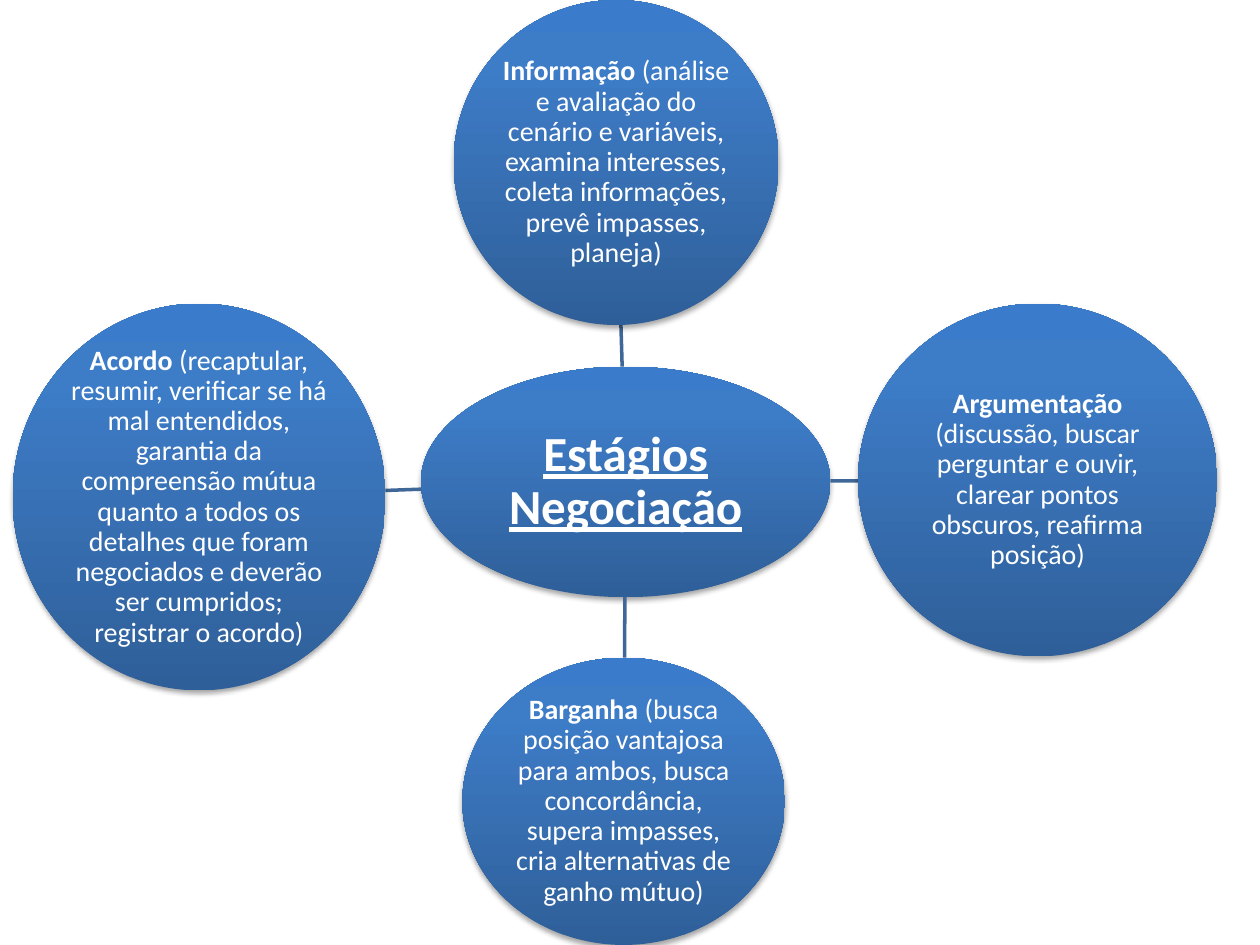
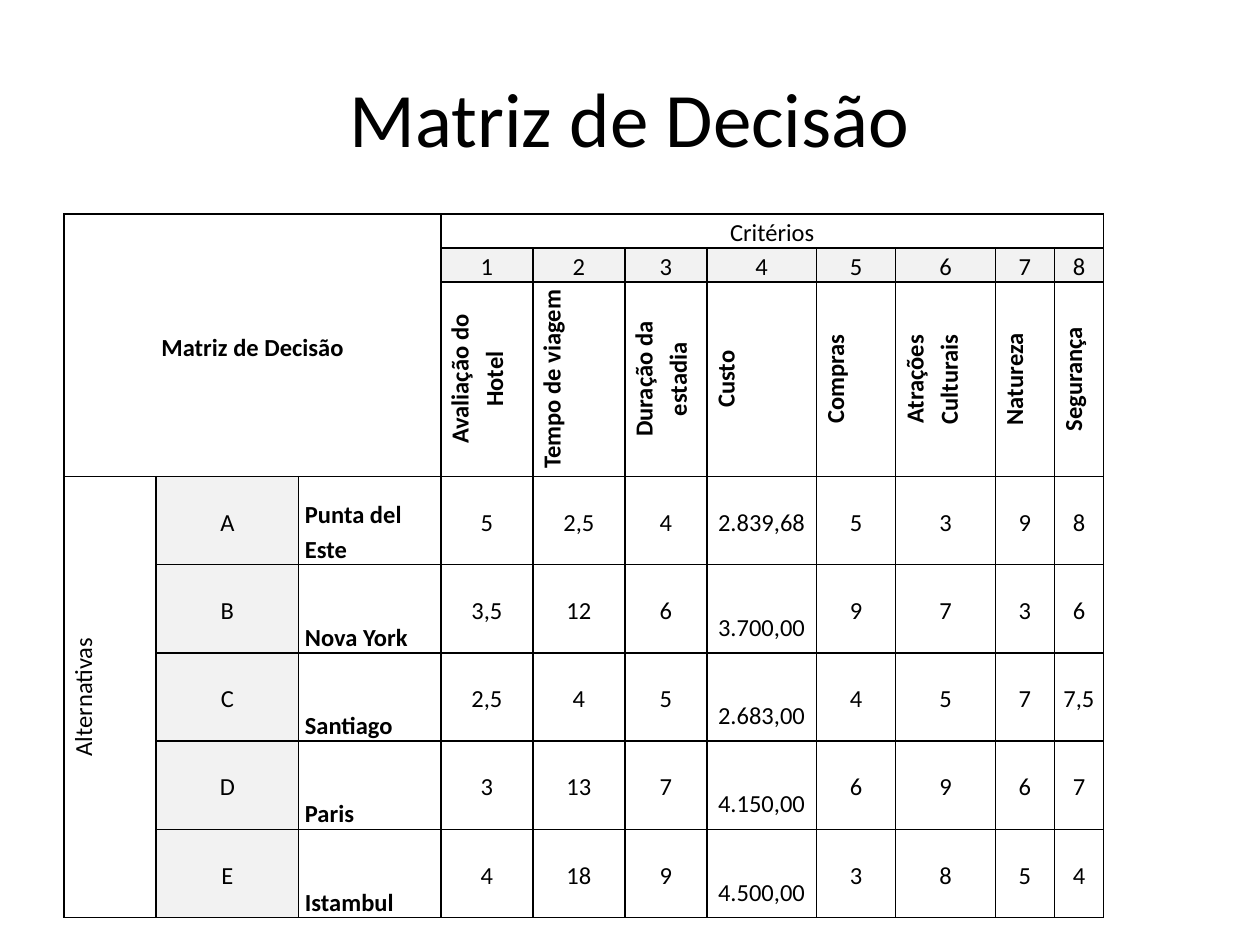
from copy import deepcopy
from dataclasses import dataclass
from itertools import product
from math import hypot

from pptx import Presentation
from pptx.dml.color import RGBColor
from pptx.enum.shapes import MSO_CONNECTOR, MSO_SHAPE
from pptx.enum.text import MSO_ANCHOR, PP_ALIGN
from pptx.oxml import parse_xml
from pptx.oxml.ns import nsdecls, qn
from pptx.util import Inches, Pt

UNIT = 0.1  # inches in one grid column or row
COLUMNS, ROWS = 100, 75


@dataclass(frozen=True)
class Theme:
    font: str = "Calibri"
    ink: str = "000000"
    light: str = "FFFFFF"
    spoke: str = "3F6797"
    header: str = "F2F2F2"
    gradient: tuple = ((0, "2F5F99"), (0.8, "3D7CC7"), (1, "3A7CCB"))
    title_size: int = 44
    hub_size: int = 28
    stage_size: int = 16
    table_size: int = 14


THEME = Theme()


@dataclass(frozen=True)
class Box:
    """A rectangle measured in grid columns and rows."""
    left: float
    top: float
    width: float
    height: float

    def inner(self, left, top, width, height):
        return Box(self.left + left, self.top + top, width, height)

    def inches(self):
        return [Inches(n * UNIT) for n in (self.left, self.top, self.width, self.height)]

    def centre(self):
        return self.left + self.width / 2, self.top + self.height / 2

    def rim_towards(self, other):
        """Point where the inscribed ellipse meets the line to the other centre."""
        (x, y), (far_x, far_y) = self.centre(), other.centre()
        dx, dy = far_x - x, far_y - y
        reach = hypot(2 * dx / self.width, 2 * dy / self.height)
        return x + dx / reach, y + dy / reach


PAGE = Box(0, 0, COLUMNS, ROWS)

HUB = (33.4, 29.1, 32.5, 18.3)
STAGES = [
    ("Informação", "(análise e avaliação do cenário e variáveis, examina interesses, "
     "coleta informações, prevê impasses, planeja)", (36, 0, 25.8, 25.8)),
    ("Argumentação", "(discussão, buscar perguntar e ouvir, clarear pontos obscuros, "
     "reafirma posição)", (68.1, 24.1, 28.5, 28)),
    ("Barganha", "(busca posição vantajosa para ambos, busca concordância, "
     "supera impasses, cria alternativas de ganho mútuo)", (36.7, 52.2, 25.6, 22.8)),
    ("Acordo", "(recaptular, resumir, verificar se há mal entendidos, garantia da "
     "compreensão mútua quanto a todos os detalhes que foram negociados e deverão "
     "ser cumpridos; registrar o acordo)", (1, 24.1, 29.6, 30.7)),
]

CRITERIA = ["Avaliação do Hotel", "Tempo de viagem", "Duração da estadia", "Custo",
            "Compras", "Atrações Culturais", "Natureza", "Segurança"]
ALTERNATIVES = {
    "Punta del Este": ["5", "2,5", "4", "2.839,68", "5", "3", "9", "8"],
    "Nova York": ["3,5", "12", "6", "3.700,00", "9", "7", "3", "6"],
    "Santiago": ["2,5", "4", "5", "2.683,00", "4", "5", "7", "7,5"],
    "Paris": ["3", "13", "7", "4.150,00", "6", "9", "6", "7"],
    "Istambul": ["4", "18", "9", "4.500,00", "3", "8", "5", "4"],
}
COLUMN_WIDTHS = [7.3, 11.3, 11.3, 7.3, 7.3, 6.5, 8.7, 6.3, 7.9, 4.7, 3.9]
ROW_HEIGHTS = [2.3, 2.3, 10.4] + [7] * len(ALTERNATIVES)
FIRST_COLUMN, FIRST_ROW = 3, 3
COST = CRITERIA.index("Custo")


def set_all(target, values):
    for name, value in values.items():
        setattr(target, name, value)


def write(frame, spans, size, color, align=PP_ALIGN.CENTER, spacing=1.0):
    """Fill the first paragraph with (text, font values) spans."""
    frame.word_wrap = True
    para = frame.paragraphs[0]
    set_all(para, {"alignment": align, "line_spacing": spacing})
    for text, values in spans:
        span = para.add_run()
        span.text = text
        set_all(span.font, {"name": THEME.font, "size": Pt(size), "bold": False, **values})
        span.font.color.rgb = RGBColor.from_string(color)


def set_margins(target, side, top=0.0, bottom=0.0):
    set_all(target, {"margin_left": Inches(side), "margin_right": Inches(side),
                     "margin_top": Inches(top), "margin_bottom": Inches(bottom)})


def add_bubble(page, box, spans, size, margin):
    bubble = page.shapes.add_shape(MSO_SHAPE.OVAL, *box.inches())
    bubble.line.fill.background()
    bubble.fill.gradient()
    bubble.fill.gradient_angle = 90
    properties = bubble._element.spPr
    stops = properties.find(".//" + qn("a:gsLst"))
    stops.append(deepcopy(stops[0]))
    for stop, (position, color) in zip(bubble.fill.gradient_stops, THEME.gradient):
        stop.position = position
        stop.color.rgb = RGBColor.from_string(color)
    bubble.shadow.inherit = False
    properties.find(qn("a:effectLst")).append(parse_xml(
        f'<a:outerShdw {nsdecls("a")} blurRad="{Pt(3.1)}" dist="{Pt(1.8)}" dir="5400000" '
        f'rotWithShape="0"><a:srgbClr val="{THEME.ink}"><a:alpha val="35000"/></a:srgbClr>'
        '</a:outerShdw>'))
    frame = bubble.text_frame
    frame.vertical_anchor = MSO_ANCHOR.MIDDLE
    set_margins(frame, margin, margin, margin)
    write(frame, spans, size, THEME.light, spacing=0.9)


def add_spoke(page, hub, stage):
    ends = (*hub.rim_towards(stage), *stage.rim_towards(hub))
    spoke = page.shapes.add_connector(MSO_CONNECTOR.STRAIGHT, *(Inches(n * UNIT) for n in ends))
    spoke.line.width = Pt(2)
    spoke.line.color.rgb = RGBColor.from_string(THEME.spoke)
    spoke._element.spPr.append(parse_xml(f'<a:effectLst {nsdecls("a")}/>'))


def build_stages(page, box):
    hub = box.inner(*HUB)
    add_bubble(page, hub, [("Estágios Negociação", {"bold": True, "underline": True})],
               THEME.hub_size, 0.02)
    for name, details, place in STAGES:
        stage = box.inner(*place)
        add_spoke(page, hub, stage)
        add_bubble(page, stage, [(name, {"bold": True}), (" " + details, {})],
                   THEME.stage_size, 0.01)


def add_title(page, box, text):
    frame = page.shapes.add_textbox(*box.inches()).text_frame
    frame.vertical_anchor = MSO_ANCHOR.MIDDLE
    write(frame, [(text, {})], THEME.title_size, THEME.ink)


def style_cell(cell):
    """Give the cell black borders, no fill and narrow margins."""
    properties = cell._tc.get_or_add_tcPr()
    for side in "LRTB":
        properties.append(parse_xml(
            f'<a:ln{side} {nsdecls("a")} w="{Pt(1)}"><a:solidFill>'
            f'<a:srgbClr val="{THEME.ink}"/></a:solidFill></a:ln{side}>'))
    cell.fill.background()
    set_margins(cell, 0.05)


def fill_cell(cell, text, bold=False, shaded=False, upright=False,
              anchor=MSO_ANCHOR.MIDDLE, align=PP_ALIGN.CENTER):
    cell.vertical_anchor = anchor
    if shaded:
        cell.fill.solid()
        cell.fill.fore_color.rgb = RGBColor.from_string(THEME.header)
    if upright:
        cell._tc.get_or_add_tcPr().set("vert", "vert270")
    write(cell.text_frame, [(text, {"bold": bold})], THEME.table_size, THEME.ink, align, 1.15)


def add_matrix(page, box):
    row_count, column_count = len(ROW_HEIGHTS), len(COLUMN_WIDTHS)
    table = page.shapes.add_table(row_count, column_count, *box.inches()).table
    set_all(table, {"first_row": False, "horz_banding": False})
    for column, width in zip(table.columns, COLUMN_WIDTHS):
        column.width = Inches(width * UNIT)
    for row, height in zip(table.rows, ROW_HEIGHTS):
        row.height = Inches(height * UNIT)
    for row, column in product(range(row_count), range(column_count)):
        style_cell(table.cell(row, column))

    for first, last in [((0, 0), (FIRST_ROW - 1, FIRST_COLUMN - 1)),
                        ((0, FIRST_COLUMN), (0, column_count - 1)),
                        ((FIRST_ROW, 0), (row_count - 1, 0))]:
        table.cell(*first).merge(table.cell(*last))
    fill_cell(table.cell(0, 0), "Matriz de Decisão", bold=True)
    fill_cell(table.cell(0, FIRST_COLUMN), "Critérios", anchor=MSO_ANCHOR.BOTTOM)
    fill_cell(table.cell(FIRST_ROW, 0), "Alternativas", upright=True)

    for number, criterion in enumerate(CRITERIA):
        column = FIRST_COLUMN + number
        fill_cell(table.cell(1, column), str(number + 1), shaded=True)
        fill_cell(table.cell(2, column), criterion, bold=True, upright=True)
    for number, (name, scores) in enumerate(ALTERNATIVES.items()):
        row = FIRST_ROW + number
        fill_cell(table.cell(row, 1), "ABCDE"[number], shaded=True)
        fill_cell(table.cell(row, 2), name, bold=True,
                  anchor=MSO_ANCHOR.BOTTOM, align=PP_ALIGN.LEFT)
        for column, score in enumerate(scores, FIRST_COLUMN):
            fill_cell(table.cell(row, column), score)
        if number:  # costs after the first sit half a line lower
            table.cell(row, FIRST_COLUMN + COST).margin_top = Inches(0.27)


def build_decision(page, box):
    add_title(page, box.inner(5, 3, 90, 12.5), "Matriz de Decisão")
    add_matrix(page, box.inner(5.1, 17, sum(COLUMN_WIDTHS), sum(ROW_HEIGHTS)))


def main():
    deck = Presentation()
    set_all(deck, {"slide_width": Inches(COLUMNS * UNIT), "slide_height": Inches(ROWS * UNIT)})
    for build in (build_stages, build_decision):
        build(deck.slides.add_slide(deck.slide_layouts[6]), PAGE)
    deck.save("out.pptx")


if __name__ == "__main__":
    main()
